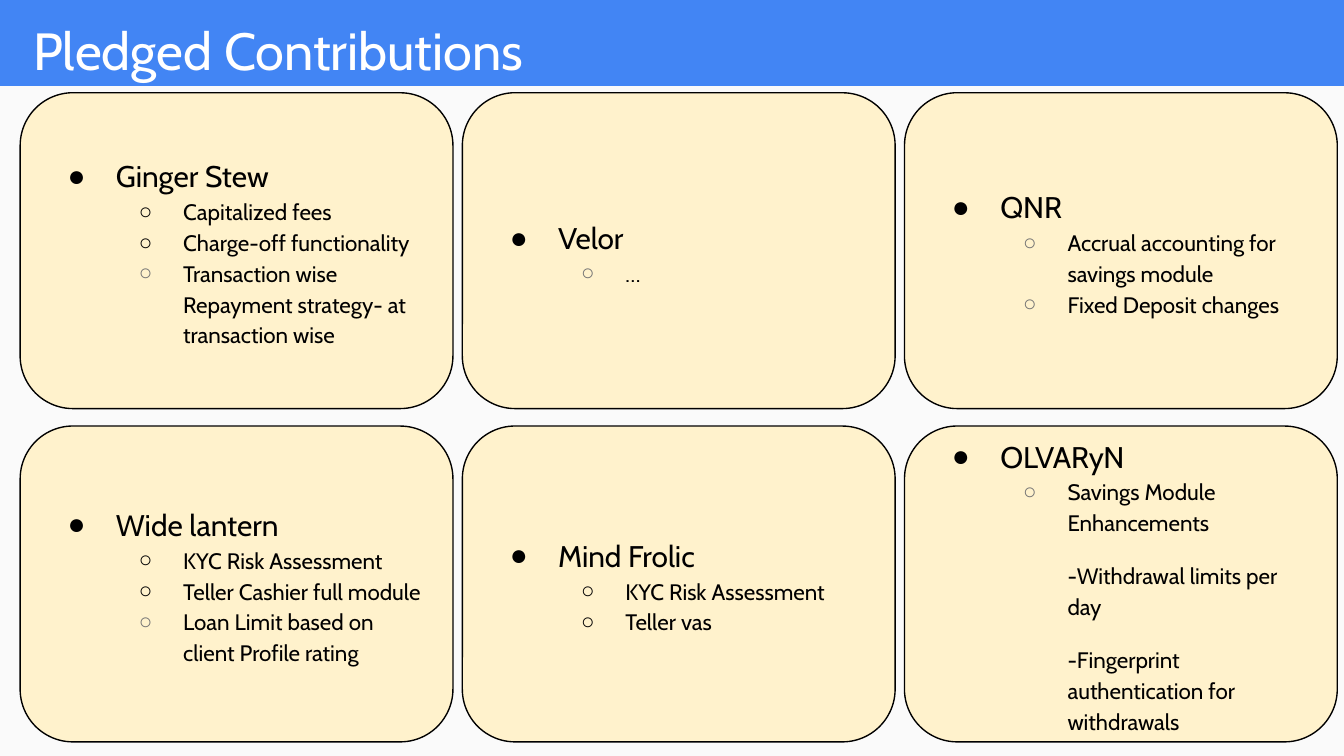
from lxml.etree import SubElement
from pptx import Presentation
from pptx.dml.color import RGBColor
from pptx.enum.shapes import MSO_SHAPE as SHAPE
from pptx.enum.text import MSO_ANCHOR as ANCHOR, PP_ALIGN as ALIGN
from pptx.oxml.ns import qn
from pptx.util import Inches, Pt

BLACK, GREY = "000000", "737373"


def rgb(value):
    return RGBColor.from_string(value)


def add_para(p, text, size, color, left, hang=0, bullet=None, bullet_color=BLACK):
    p.alignment = ALIGN.LEFT
    p.line_spacing = 1.15
    r = p.add_run()
    r.text = text
    r.font.name = "Cabin"
    r.font.size = Pt(size)
    r.font.color.rgb = rgb(color)
    pPr = p._p.get_or_add_pPr()
    pPr.set("marL", str(Inches(left)))
    pPr.set("indent", str(-Inches(hang)))
    if bullet:
        clr = SubElement(pPr, qn("a:buClr"))
        SubElement(clr, qn("a:srgbClr"), val=bullet_color)
        SubElement(pPr, qn("a:buFont"), typeface="Arial")
        SubElement(pPr, qn("a:buChar"), char=bullet)


prs = Presentation()
prs.slide_width = Inches(10)
prs.slide_height = Inches(10 * 9 / 16)
s = prs.slides.add_slide(prs.slide_layouts[6])
s.background.fill.solid()
s.background.fill.fore_color.rgb = rgb("4285F4")

body = s.shapes.add_shape(SHAPE.RECTANGLE, 0, Inches(0.64), Inches(10), Inches(4.99))
body.shadow.inherit = False
body.fill.solid()
body.fill.fore_color.rgb = rgb("FAFAFA")
body.line.fill.background()

title = s.shapes.add_textbox(Inches(0.15), Inches(-0.14), Inches(8.99), Inches(0.84))
tf = title.text_frame
tf.word_wrap = True
tf.vertical_anchor = ANCHOR.BOTTOM
tf.margin_left = tf.margin_right = tf.margin_top = tf.margin_bottom = Inches(0.1)
add_para(tf.paragraphs[0], "Pledged Contributions", 28, "FFFFFF", 0)
tf.paragraphs[0].line_spacing = 1.0

cards = [
    ("Ginger Stew", [("Capitalized fees", BLACK), ("Charge-off functionality", BLACK),
                     ("Transaction wise Repayment strategy- at transaction wise", GREY)], []),
    ("Velor", [("…", GREY)], []),
    ("QNR", [("Accrual accounting for savings module", GREY),
             ("Fixed Deposit changes", GREY)], []),
    ("Wide lantern", [("KYC Risk Assessment", BLACK), ("Teller Cashier full module", BLACK),
                      ("Loan Limit based on client Profile rating", GREY)], []),
    ("Mind Frolic", [("KYC Risk Assessment", BLACK), ("Teller vas", BLACK)], []),
    ("OLVARyN", [("Savings Module Enhancements", GREY)],
     ["-Withdrawal limits per day", "-Fingerprint authentication for withdrawals"]),
]

for i, (name, items, details) in enumerate(cards):
    row, col = divmod(i, 3)
    sp = s.shapes.add_shape(SHAPE.ROUNDED_RECTANGLE, Inches(0.15 + 3.29 * col),
                            Inches(0.69 + 2.48 * row), Inches(3.22), Inches(2.35))
    sp.shadow.inherit = False
    sp.adjustments[0] = 0.167
    sp.fill.solid()
    sp.fill.fore_color.rgb = rgb("FFF2CC")
    sp.line.color.rgb = rgb(BLACK)
    sp.line.width = Pt(0.75)
    tf = sp.text_frame
    tf.word_wrap = True
    tf.vertical_anchor = ANCHOR.MIDDLE
    tf.margin_left = tf.margin_right = tf.margin_top = tf.margin_bottom = Inches(0.1)
    add_para(tf.paragraphs[0], name, 16, BLACK, 0.5, 0.36, "●")
    for text, bullet_color in items:
        p = tf.add_paragraph()
        p.level = 1
        add_para(p, text, 12, BLACK, 1, 0.33, "○", bullet_color)
    for text in details:
        p = tf.add_paragraph()
        p.space_before = Pt(12)
        add_para(p, text, 12, BLACK, 1)
    if details:
        p.space_after = Pt(12)

prs.save("out.pptx")
